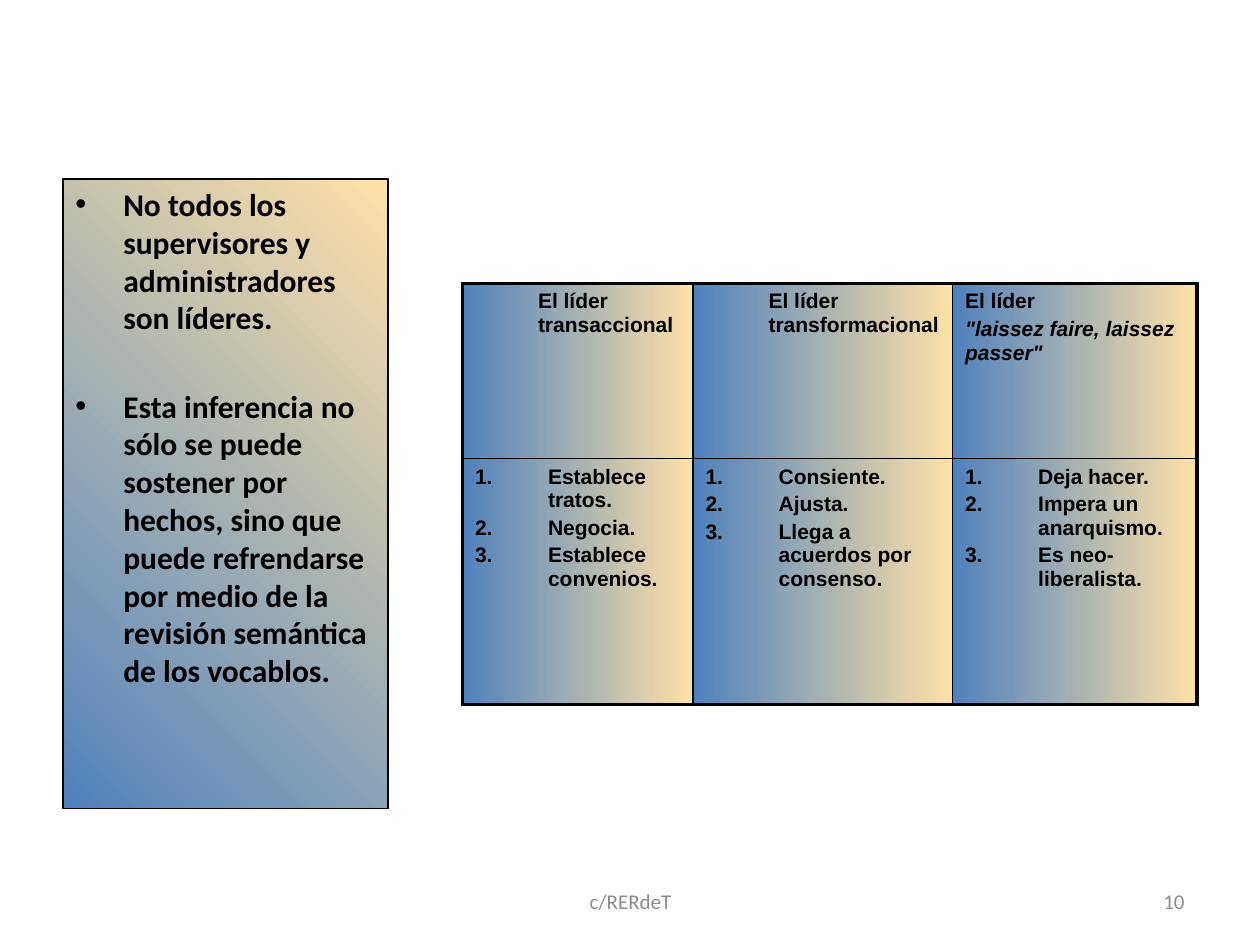
from lxml import etree
from pptx import Presentation
from pptx import util as u
from pptx.dml.color import RGBColor
from pptx.enum import shapes, text
from pptx.oxml.ns import qn

BLACK, GREY, BLUE, SAND = "000000", "8C8C8C", "4F81BD", "FFE2A7"

BULLETS = [
    "No todos los supervisores y administradores son líderes.",
    "Esta inferencia no sólo se puede sostener por hechos, sino que puede "
    "refrendarse por medio de la revisión semántica de los vocablos.",
]
HEADERS = [
    ["El líder transaccional"],
    ["El líder transformacional"],
    ["El líder", "\"laissez faire, laissez passer\""],
]
TRAITS = [
    ["Establece tratos.", "Negocia.", "Establece convenios."],
    ["Consiente.", "Ajusta.", "Llega a acuerdos por consenso."],
    ["Deja hacer.", "Impera un anarquismo.", "Es neo-liberalista."],
]


def rgb(hex_color):
    return RGBColor.from_string(hex_color)


def set_gradient(fill, angle):
    fill.gradient()
    fill.gradient_angle = angle
    for stop, color in zip(fill.gradient_stops, (BLUE, SAND)):
        stop.color.rgb = rgb(color)


def add_run(p, words, size, font, color=BLACK, bold=True, italic=False):
    r = p.add_run()
    r.text = words
    r.font.size, r.font.name = u.Pt(size), font
    r.font.bold, r.font.italic = bold, italic
    r.font.color.rgb = rgb(color)


def set_indent(p, left, hanging=0, bullet=None, **attributes):
    pPr = p._p.get_or_add_pPr()
    pPr.set("marL", str(u.Inches(left)))
    pPr.set("indent", str(-u.Inches(hanging)))
    if bullet:
        etree.SubElement(pPr, qn("a:buFont"), typeface="Arial")
        etree.SubElement(pPr, qn(bullet), **attributes)


def add_paragraphs(tf, lines, gap):
    """Yield one left-aligned paragraph for each line, with a gap between them."""
    for i, line in enumerate(lines):
        p = tf.add_paragraph() if i else tf.paragraphs[0]
        p.alignment = text.PP_ALIGN.LEFT
        if i:
            p.space_before = u.Pt(gap)
        yield p, line


def set_border(cell, sides):
    tcPr = cell._tc.get_or_add_tcPr()
    for i, (side, width) in enumerate(sides):
        ln = etree.Element(qn(f"a:ln{side}"), w=str(u.Pt(width)))
        fill = etree.SubElement(ln, qn("a:solidFill"))
        etree.SubElement(fill, qn("a:srgbClr"), val=BLACK)
        tcPr.insert(i, ln)


def add_statement(s, x, y, w, h):
    sp = s.shapes.add_shape(shapes.MSO_SHAPE.RECTANGLE, x, y, w, h)
    sp.shadow.inherit = False
    set_gradient(sp.fill, 45)
    sp.line.color.rgb, sp.line.width = rgb(BLACK), u.Pt(0.75)
    tf = sp.text_frame
    tf.word_wrap, tf.vertical_anchor = True, text.MSO_ANCHOR.TOP
    for p, line in add_paragraphs(tf, BULLETS, 28.8):
        set_indent(p, 0.38, 0.38, "a:buChar", char="•")
        add_run(p, line, 18, "Calibri")


def add_leader_table(s, x, y, w, h):
    rows = [HEADERS, TRAITS]
    last_row, last_col = len(rows) - 1, len(HEADERS) - 1
    table = s.shapes.add_table(len(rows), len(HEADERS), x, y, w, h).table
    for column, width in zip(table.columns, (1.83, 2.06, 1.94)):
        column.width = u.Inches(width)
    for row, height in zip(table.rows, (1.39, 1.95)):
        row.height = u.Inches(height)

    for i, row in enumerate(rows):
        for j, lines in enumerate(row):
            cell = table.cell(i, j)
            set_gradient(cell.fill, 0)
            # Thick outer frame, thin inner rules
            outer = (("L", j == 0), ("R", j == last_col), ("T", i == 0), ("B", i == last_row))
            set_border(cell, [(side, 2.25 if edge else 1) for side, edge in outer])
            for p, line in add_paragraphs(cell.text_frame, lines, 2.4):
                if i:
                    set_indent(p, 0.58, 0.58, "a:buAutoNum", type="arabicPeriod")
                elif j < last_col:
                    set_indent(p, 0.5)
                add_run(p, line, 12, "Arial", italic=line.startswith('"'))


def add_footer(s, x, y, w, h, words, alignment):
    tf = s.shapes.add_textbox(x, y, w, h).text_frame
    tf.word_wrap, tf.vertical_anchor = True, text.MSO_ANCHOR.MIDDLE
    p = tf.paragraphs[0]
    p.alignment = alignment
    add_run(p, words, 12, "Calibri", GREY, bold=False)


def box(*lengths):
    return [u.Inches(length) for length in lengths]


def main():
    prs = Presentation()
    prs.slide_width, prs.slide_height = box(10, 7.5)
    s = prs.slides.add_slide(prs.slide_layouts[6])
    # Footer and slide number
    add_footer(s, *box(3.42, 6.95, 3.17, 0.4), "c/RERdeT", text.PP_ALIGN.CENTER)
    add_footer(s, *box(7.17, 6.95, 2.33, 0.4), "10", text.PP_ALIGN.RIGHT)
    # Statement on the left, comparison of leaders on the right
    add_statement(s, *box(0.5, 1.42, 2.58, 5))
    add_leader_table(s, *box(3.67, 2.25, 5.83, 3.34))
    prs.save("out.pptx")


if __name__ == "__main__":
    main()
